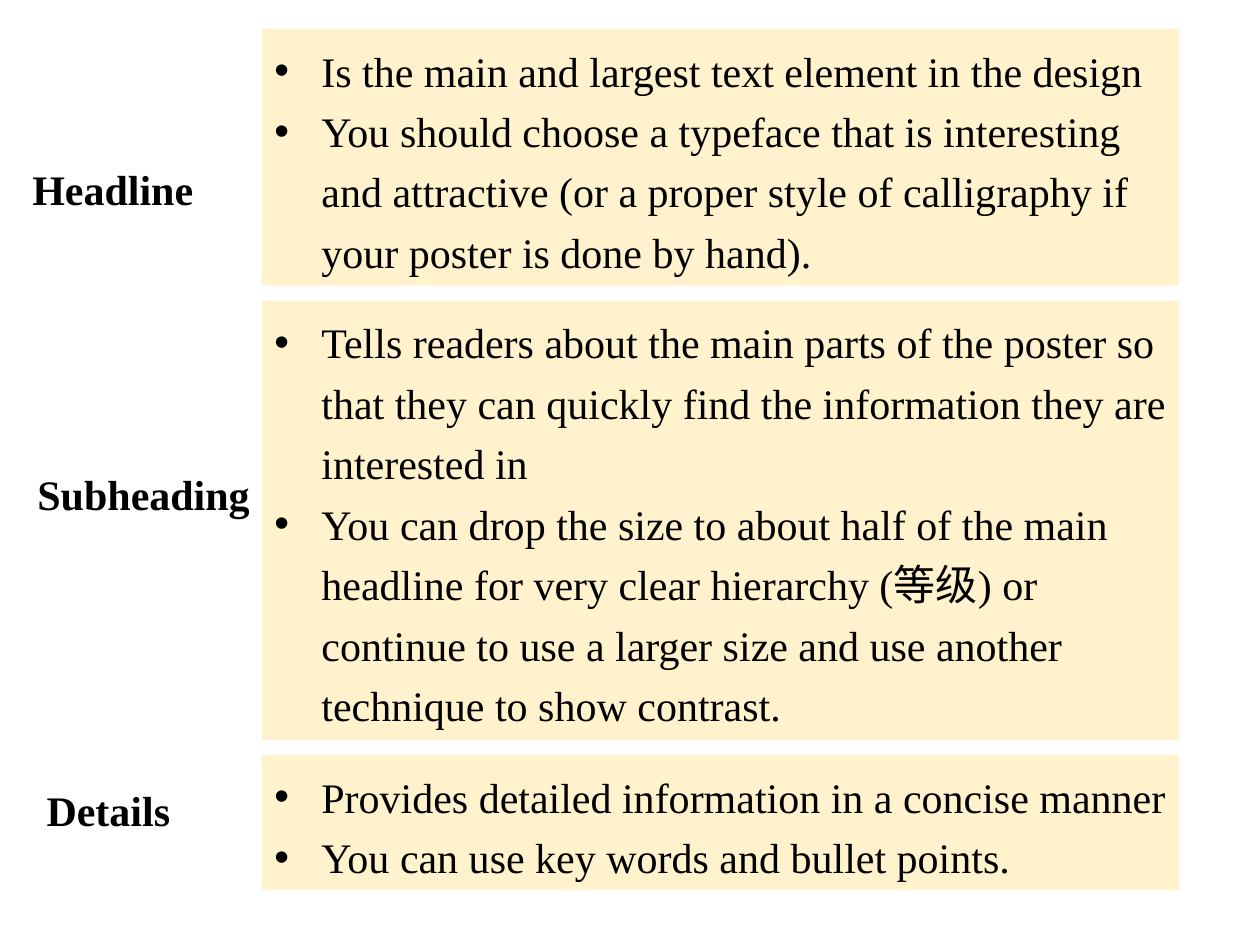
from lxml import etree
from pptx import Presentation
from pptx.dml.color import RGBColor
from pptx.enum.shapes import MSO_SHAPE
from pptx.enum.text import MSO_ANCHOR, MSO_AUTO_SIZE, PP_ALIGN
from pptx.oxml.ns import qn
from pptx.util import Cm, Pt

RECTANGLE = MSO_SHAPE.RECTANGLE
TOP = MSO_ANCHOR.TOP
GROW = MSO_AUTO_SIZE.SHAPE_TO_FIT_TEXT
LEFT, CENTER = PP_ALIGN.LEFT, PP_ALIGN.CENTER

CREAM = RGBColor(0xFF, 0xF2, 0xCC)
BLACK = RGBColor(0x00, 0x00, 0x00)
LATIN_FONT = "Times New Roman"
CHINESE_FONT = "Noto Sans CJK SC"

PANEL_LEFT, PANEL_WIDTH = 5.28, 18.49
PANEL_TOP, PANEL_GAP = 0.58, 0.3
LABEL_HEIGHT = 1.47
BULLET_INDENT = Cm(0.95)

# Each part: label, label left, top and width, panel height, bullet points
PARTS = [
    ("Headline", -0.71, 2.97, 5.97, 5.18, [
        "Is the main and largest text element in the design",
        "You should choose a typeface that is interesting and attractive "
        "(or a proper style of calligraphy if your poster is done by hand).",
    ]),
    ("Subheading", 0, 9.12, 5.79, 8.86, [
        "Tells readers about the main parts of the poster so that they can "
        "quickly find the information they are interested in",
        "You can drop the size to about half of the main headline for very "
        "clear hierarchy (等级) or continue to use a larger size and use "
        "another technique to show contrast.",
    ]),
    ("Details", -0.71, 15.49, 5.79, 2.72, [
        "Provides detailed information in a concise manner",
        "You can use key words and bullet points.",
    ]),
]


def format_paragraph(paragraph, alignment, bold=False):
    paragraph.alignment = alignment
    paragraph.line_spacing = 1.2
    for run in paragraph.runs:
        run.font.name = LATIN_FONT
        run.font.size = Pt(24)
        run.font.bold = bold
        run.font.color.rgb = BLACK
        east_asian = etree.Element(qn("a:ea"), typeface=CHINESE_FONT)
        run.font._element.find(qn("a:latin")).addnext(east_asian)


def add_bullet(paragraph):
    properties = paragraph._p.get_or_add_pPr()
    properties.set("marL", str(BULLET_INDENT))
    properties.set("indent", str(-BULLET_INDENT))
    etree.SubElement(properties, qn("a:buFont"), typeface="Arial")
    etree.SubElement(properties, qn("a:buChar"), char="•")


prs = Presentation()
prs.slide_width, prs.slide_height = Cm(25.4), Cm(19.05)
slide = prs.slides.add_slide(prs.slide_layouts[6])

panel_top = PANEL_TOP
for name, label_left, label_top, label_width, panel_height, points in PARTS:
    # Label on the left
    label = slide.shapes.add_textbox(
        Cm(label_left), Cm(label_top), Cm(label_width), Cm(LABEL_HEIGHT))
    label.text_frame.word_wrap = True
    label.text_frame.auto_size = GROW
    label.text_frame.text = name
    format_paragraph(label.text_frame.paragraphs[0], CENTER, bold=True)

    # Cream panel with its bullet points
    panel = slide.shapes.add_shape(
        RECTANGLE, Cm(PANEL_LEFT), Cm(panel_top), Cm(PANEL_WIDTH), Cm(panel_height))
    panel.shadow.inherit = False
    panel.fill.solid()
    panel.fill.fore_color.rgb = CREAM
    panel.line.fill.background()
    panel.text_frame.word_wrap = True
    panel.text_frame.auto_size = GROW
    panel.text_frame.vertical_anchor = TOP
    panel.text_frame.text = "\n".join(points)
    for point in panel.text_frame.paragraphs:
        add_bullet(point)
        format_paragraph(point, LEFT)

    panel_top += panel_height + PANEL_GAP

prs.save("out.pptx")
